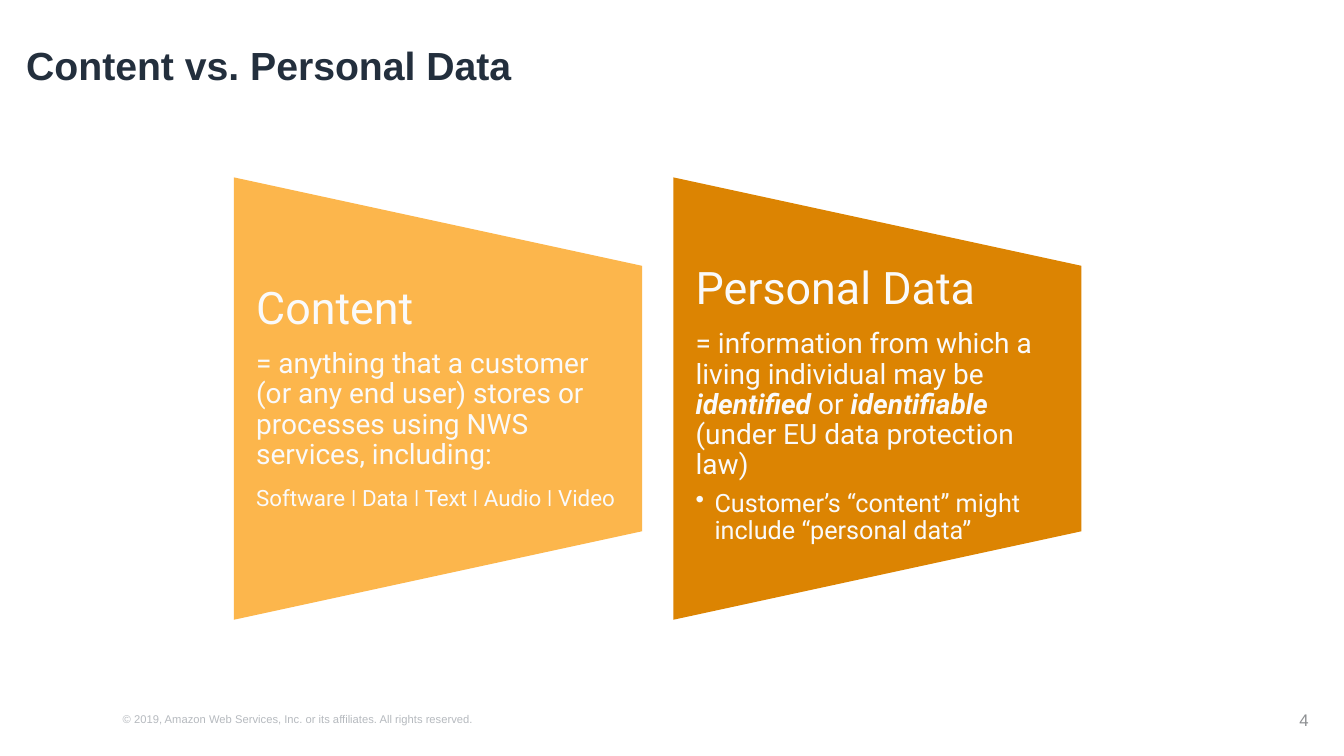
from dataclasses import dataclass

from lxml.etree import SubElement
from pptx import Presentation
from pptx.dml.color import RGBColor as RGB
from pptx.enum.text import MSO_ANCHOR as ANCHOR, MSO_AUTO_SIZE as AUTO, PP_ALIGN as ALIGN
from pptx.oxml.ns import qn
from pptx.util import Pt


@dataclass(frozen=True)
class Theme:
    heading_font: str = "Arial"
    panel_font: str = "Roboto"
    navy: str = "232F3D"
    amber: str = "FCB64C"
    orange: str = "DC8402"
    pale: str = "FAFAFA"
    footer_grey: str = "B6BABF"
    number_grey: str = "8D8F92"
    title: int = 28
    panel_title: int = 32
    body: int = 20
    bullet: int = 18
    items: int = 16
    number: int = 12
    footer: int = 8


class Deck:
    def __init__(self, theme):
        self.theme = theme
        self.prs = Presentation()
        self.prs.slide_width, self.prs.slide_height = Pt(960), Pt(540)
        self.slide = self.prs.slides.add_slide(self.prs.slide_layouts[5])

    def style(self, font, name, size, color):
        font.name, font.size = name, Pt(size)
        font.color.rgb = RGB.from_string(color)

    def title(self, text, x, y, w, h):
        sp = self.slide.shapes.title
        sp.left, sp.top, sp.width, sp.height = Pt(x), Pt(y), Pt(w), Pt(h)
        tf = sp.text_frame
        tf.text = text
        tf.auto_size, tf.vertical_anchor = AUTO.NONE, ANCHOR.MIDDLE
        p = tf.paragraphs[0]
        p.alignment, p.line_spacing = ALIGN.LEFT, 0.9
        font = p.runs[0].font
        self.style(font, self.theme.heading_font, self.theme.title, self.theme.navy)
        font.bold = True

    def label(self, text, x, y, w, h, size, color, align=ALIGN.LEFT, anchor=ANCHOR.TOP):
        tf = self.slide.shapes.add_textbox(Pt(x), Pt(y), Pt(w), Pt(h)).text_frame
        tf.word_wrap, tf.vertical_anchor = True, anchor
        tf.text = text
        p = tf.paragraphs[0]
        p.alignment = align
        self.style(p.runs[0].font, self.theme.heading_font, size, color)

    def panel(self, x, y, w, h, slope, fill, anchor, paragraphs):
        builder = self.slide.shapes.build_freeform(Pt(x), Pt(y + h))
        corners = [(x, y), (x + w, y + slope), (x + w, y + h - slope)]
        builder.add_line_segments([(Pt(cx), Pt(cy)) for cx, cy in corners], close=True)
        sp = builder.convert_to_shape()
        sp.shadow.inherit = False
        sp.fill.solid()
        sp.fill.fore_color.rgb = RGB.from_string(fill)
        sp.line.fill.background()
        tf = sp.text_frame
        tf.word_wrap, tf.vertical_anchor = True, anchor
        tf.margin_left = tf.margin_right = Pt(16)
        tf.margin_top = tf.margin_bottom = Pt(slope)
        for i, (runs, size, after, bulleted) in enumerate(paragraphs):
            p = tf.add_paragraph() if i else tf.paragraphs[0]
            if bulleted:
                self.bullet(p, 13.5)
            p.alignment, p.line_spacing, p.space_after = ALIGN.LEFT, 0.9, Pt(after)
            for text, strong in runs:
                r = p.add_run()
                r.text = text
                self.style(r.font, self.theme.panel_font, size, self.theme.pale)
                r.font.bold = r.font.italic = strong

    def bullet(self, p, indent):
        p.level = 1
        pPr = p._p.get_or_add_pPr()
        pPr.set("marL", str(Pt(indent)))
        pPr.set("indent", str(-Pt(indent)))
        SubElement(pPr, qn("a:buChar")).set("char", "•")


def main():
    t = Theme()
    deck = Deck(t)
    deck.label("© 2019, Amazon Web Services, Inc. or its affiliates. All rights reserved.",
               80.6, 505.4, 600, 17, t.footer, t.footer_grey)
    deck.label("4", 725.8, 499.7, 216, 28.8, t.number, t.number_grey,
               ALIGN.RIGHT, ANCHOR.MIDDLE)
    deck.title("Content vs. Personal Data", 11.5, 26.6, 645.8, 43.2)

    content = [
        ([("Content", False)], t.panel_title, 11, False),
        ([("= anything that a customer (or any end user) stores or processes "
           "using NWS services, including:", False)], t.body, 12, False),
        ([("Software ǀ Data ǀ Text ǀ Audio ǀ Video", False)], t.items, 12, False),
    ]
    personal_data = [
        ([("Personal Data", False)], t.panel_title, 11, False),
        ([("= information from which a living individual may be ", False),
          ("identified ", True), ("or ", False), ("identifiable ", True),
          ("(under EU data protection law)", False)], t.body, 7, False),
        ([("Customer’s “content” might include “personal data”", False)],
         t.bullet, 12, True),
    ]
    panels = [(t.amber, ANCHOR.MIDDLE, content), (t.orange, ANCHOR.TOP, personal_data)]
    left, width, gap = 167, 291.6, 22.3
    for i, (fill, anchor, paragraphs) in enumerate(panels):
        deck.panel(left + i * (width + gap), 126.7, width, 316, 63.2,
                   fill, anchor, paragraphs)
    deck.prs.save("out.pptx")


if __name__ == "__main__":
    main()
